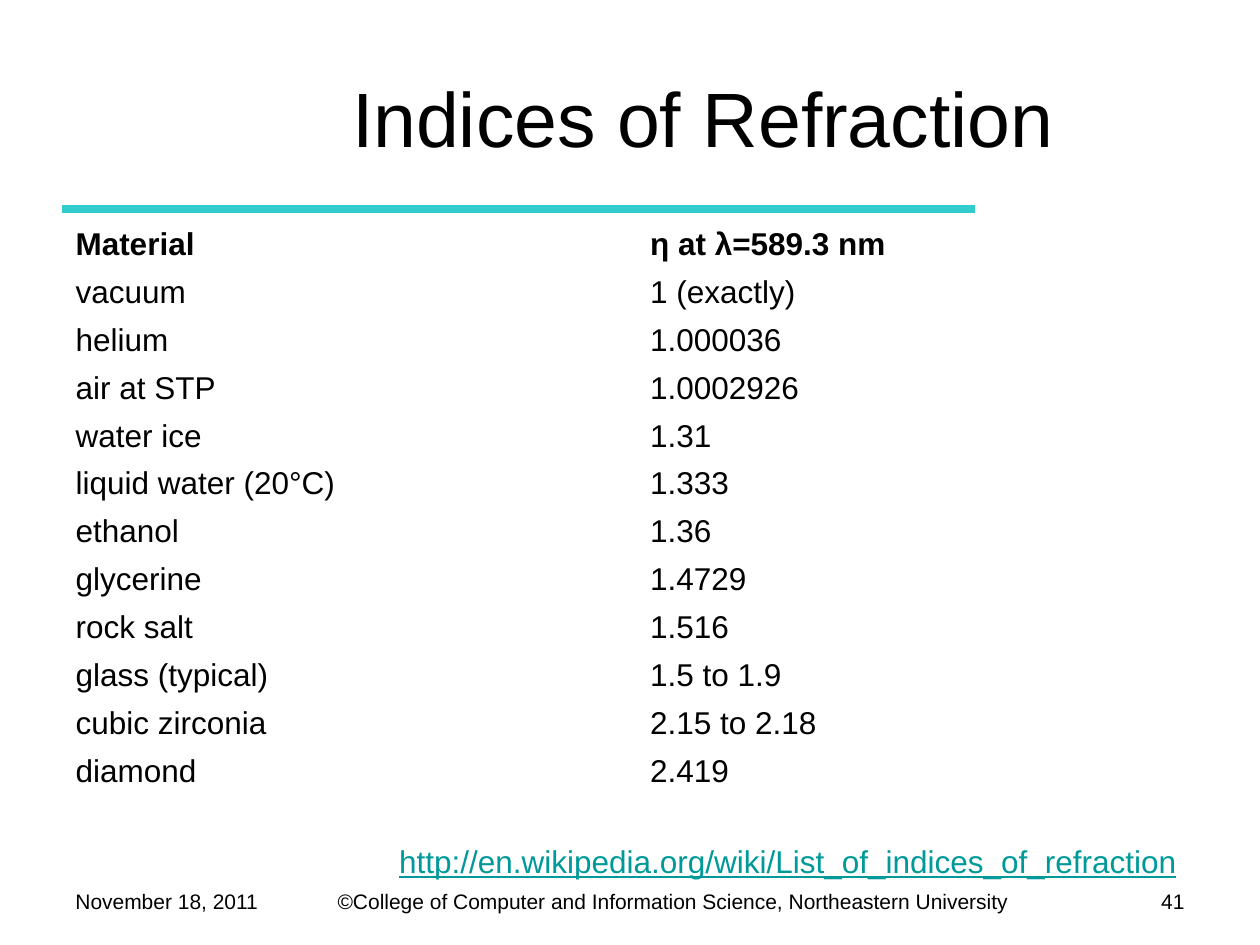
"""Build the slide listing the indices of refraction of common materials."""
from dataclasses import dataclass

from lxml import etree
from pptx import Presentation
from pptx.dml.color import RGBColor
from pptx.enum.shapes import MSO_CONNECTOR
from pptx.enum.text import MSO_ANCHOR, PP_ALIGN
from pptx.oxml.ns import qn
from pptx.util import Pt

STRAIGHT = MSO_CONNECTOR.STRAIGHT
MIDDLE = MSO_ANCHOR.MIDDLE
LEFT, CENTER, RIGHT = PP_ALIGN.LEFT, PP_ALIGN.CENTER, PP_ALIGN.RIGHT

BLACK = RGBColor(0x00, 0x00, 0x00)
TURQUOISE = RGBColor(0x33, 0xCC, 0xCC)
TEAL = RGBColor(0x00, 0x99, 0x99)
FONT = "Arial"
ROW_HEIGHT = 24
COLUMN_WIDTHS = (328.3, 319.7)
HANGING_INDENT = 27


@dataclass
class Label:
    text: str
    left: float
    top: float
    width: float
    height: float
    size: float = 12
    color: RGBColor = BLACK
    align: PP_ALIGN = LEFT
    underline: bool = False


@dataclass
class Material:
    name: str
    index: str


LABELS = (
    Label("©College of Computer and Information Science, Northeastern University",
          185.8, 504, 407.5, 21.6),
    Label("November 18, 2011", 36, 504, 126, 23.8),
    Label("41", 624.2, 504, 59.8, 25.2, align=RIGHT),
    Label("http://en.wikipedia.org/wiki/List_of_indices_of_refraction",
          221, 477.4, 461.5, 28.8, size=18, color=TEAL, underline=True),
)

ROWS = (
    Material("Material", "η at λ=589.3 nm"),
    Material("vacuum", "1 (exactly)"),
    Material("helium", "1.000036"),
    Material("air at STP", "1.0002926"),
    Material("water ice", "1.31"),
    Material("liquid water (20°C)", "1.333"),
    Material("ethanol", "1.36"),
    Material("glycerine", "1.4729"),
    Material("rock salt", "1.516"),
    Material("glass (typical)", "1.5 to 1.9"),
    Material("cubic zirconia", "2.15 to 2.18"),
    Material("diamond", "2.419"),
)


def write(para, text: str, size: float, color: RGBColor = BLACK,
          bold: bool = False, underline: bool = False) -> None:
    span = para.add_run()
    span.text = text
    span.font.name = FONT
    span.font.size = Pt(size)
    span.font.bold = bold
    span.font.underline = underline
    span.font.color.rgb = color


def add_title(page, text: str) -> None:
    title = page.shapes.title
    title.left, title.top = Pt(132), Pt(21.6)
    title.width, title.height = Pt(552), Pt(90)
    title.text_frame.vertical_anchor = MIDDLE
    para = title.text_frame.paragraphs[0]
    para.alignment = CENTER
    write(para, text, 44)


def add_rule(page) -> None:
    rule = page.shapes.add_connector(STRAIGHT, Pt(35.3), Pt(119.5), Pt(557.3), Pt(119.5))
    rule.line.color.rgb = TURQUOISE
    rule.line.width = Pt(4.5)
    etree.SubElement(rule.line._get_or_add_ln().getparent(), qn("a:effectLst"))


def add_label(page, label: Label) -> None:
    box = page.shapes.add_textbox(Pt(label.left), Pt(label.top),
                                  Pt(label.width), Pt(label.height))
    box.text_frame.word_wrap = True
    para = box.text_frame.paragraphs[0]
    para.alignment = label.align
    write(para, label.text, label.size, label.color, underline=label.underline)


def add_materials(page, rows: tuple[Material, ...]) -> None:
    frame = page.shapes.add_table(len(rows), len(COLUMN_WIDTHS), Pt(36), Pt(126),
                                  Pt(sum(COLUMN_WIDTHS)), Pt(ROW_HEIGHT * len(rows)))
    table = frame.table
    table.horz_banding = False
    table.first_row = False
    for column, width in zip(table.columns, COLUMN_WIDTHS):
        column.width = Pt(width)
    for number, (row, material) in enumerate(zip(table.rows, rows)):
        row.height = Pt(ROW_HEIGHT)
        for cell, text in zip(row.cells, (material.name, material.index)):
            cell.fill.background()
            for side in ("a:lnB", "a:lnT", "a:lnR", "a:lnL"):
                border = etree.Element(qn(side), w="0")
                etree.SubElement(border, qn("a:noFill"))
                cell._tc.get_or_add_tcPr().insert(0, border)
            para = cell.text_frame.paragraphs[0]
            properties = para._p.get_or_add_pPr()
            properties.set("marL", str(Pt(HANGING_INDENT)))
            properties.set("indent", str(-Pt(HANGING_INDENT)))
            write(para, text, 18, bold=number == 0)


def main() -> None:
    deck = Presentation()
    deck.slide_width, deck.slide_height = Pt(720), Pt(540)
    page = deck.slides.add_slide(deck.slide_layouts.get_by_name("Title Only"))
    add_rule(page)
    add_title(page, "Indices of Refraction ")
    add_materials(page, ROWS)
    for label in LABELS:
        add_label(page, label)
    deck.save("out.pptx")


if __name__ == "__main__":
    main()
